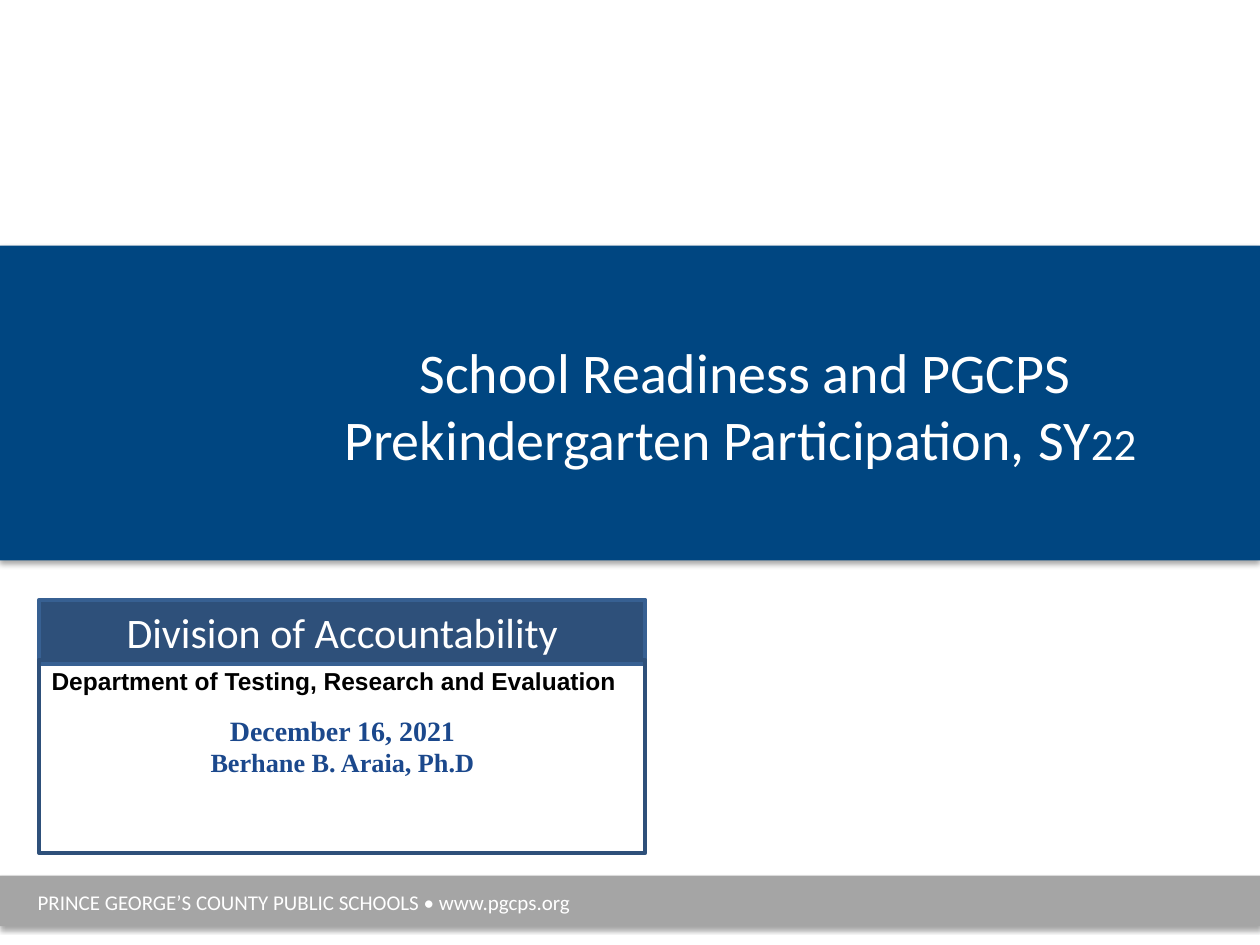
import pptx
import pptx.dml.color
import pptx.enum.shapes
import pptx.enum.text
import pptx.oxml
import pptx.oxml.ns
import pptx.util
from dataclasses import dataclass

Cm, Pt = pptx.util.Cm, pptx.util.Pt
ALIGN = pptx.enum.text.PP_ALIGN
ANCHOR = pptx.enum.text.MSO_ANCHOR


@dataclass(frozen=True)
class Theme:
    band: str = "004681"
    footer: str = "A5A5A5"
    panel: str = "2E507A"
    panel_edge: str = "376092"
    date: str = "1B488C"
    white: str = "FFFFFF"
    black: str = "000000"
    sans: str = "Calibri"
    label: str = "Arial"
    serif: str = "Times New Roman"
    title_size: int = 32
    division_size: int = 24
    date_size: int = 16
    author_size: int = 15
    label_size: int = 14
    footer_size: int = 12
    edge_width: float = 2.25


class Deck:
    def __init__(self, theme):
        self.theme = theme
        self.prs = pptx.Presentation()
        self.prs.slide_width, self.prs.slide_height = Cm(25.4), Cm(19.05)
        self.s = self.prs.slides.add_slide(self.prs.slide_layouts[6])

    def rect(self, left, top, width, height, fill=None, line=None):
        sp = self.s.shapes.add_shape(
            pptx.enum.shapes.MSO_SHAPE.RECTANGLE,
            Cm(left), Cm(top), Cm(width), Cm(height))
        sp.shadow.inherit = False
        if fill:
            sp.fill.solid()
            sp.fill.fore_color.rgb = pptx.dml.color.RGBColor.from_string(fill)
        else:
            sp.fill.background()
        if line:
            sp.line.color.rgb = pptx.dml.color.RGBColor.from_string(line)
            sp.line.width = Pt(self.theme.edge_width)
        else:
            sp.line.fill.background()
        return sp

    def band(self, top, height, fill):
        """Full-width bar with a soft shadow below it."""
        sp = self.rect(0, top, 25.4, height, fill)
        effects = sp._element.spPr.find(pptx.oxml.ns.qn("a:effectLst"))
        effects.append(pptx.oxml.parse_xml(
            f'<a:outerShdw {pptx.oxml.ns.nsdecls("a")} blurRad="40000" '
            'dist="23000" dir="5400000" rotWithShape="0">'
            f'<a:srgbClr val="{self.theme.black}"><a:alpha val="35000"/>'
            '</a:srgbClr></a:outerShdw>'))

    def textbox(self, left, top, width, height):
        return self.s.shapes.add_textbox(
            Cm(left), Cm(top), Cm(width), Cm(height))

    def add_text(self, sp, lines, font, color, bold=False,
                 align=ALIGN.LEFT, anchor=ANCHOR.TOP):
        """Fill a shape with (text, size) lines."""
        tf = sp.text_frame
        tf.word_wrap = True
        tf.vertical_anchor = anchor
        tf.text = "\n".join(text for text, _ in lines)
        for p, (_, size) in zip(tf.paragraphs, lines):
            p.alignment = align
            for r in p.runs:
                self.style(r, font, size, color, bold)
        return tf

    def style(self, r, font, size, color, bold=False):
        r.font.name, r.font.size, r.font.bold = font, Pt(size), bold
        r.font.color.rgb = pptx.dml.color.RGBColor.from_string(color)


def main():
    t = Theme()
    deck = Deck(t)

    # Title band and footer
    deck.band(4.95, 6.35, t.band)
    deck.band(17.65, 1.02, t.footer)
    deck.add_text(deck.textbox(0.51, 17.81, 17.37, 0.76),
                  [("PRINCE GEORGE’S COUNTY PUBLIC SCHOOLS • www.pgcps.org",
                    t.footer_size)], t.sans, t.white)

    # Division panel
    left, width = 0.79, 12.22
    deck.add_text(deck.rect(left, 12.09, width, 1.3, t.panel, t.panel_edge),
                  [("Division of Accountability", t.division_size)],
                  t.sans, t.white, align=ALIGN.CENTER, anchor=ANCHOR.MIDDLE)
    deck.add_text(deck.rect(left, 13.31, width, 3.89, line=t.panel),
                  [("Department of Testing, Research and Evaluation",
                    t.label_size)], t.label, t.black, bold=True)

    # Presentation title, with the school year in small capitals
    tf = deck.add_text(deck.textbox(4.65, 5.13, 20.75, 6.07),
                       [("School Readiness and PGCPS "
                         "Prekindergarten Participation, ", t.title_size)],
                       t.sans, t.white, align=ALIGN.CENTER,
                       anchor=ANCHOR.MIDDLE)
    r = tf.paragraphs[0].add_run()
    r.text = "SY22 "
    deck.style(r, t.sans, t.title_size, t.white)
    r._r.get_or_add_rPr().set("cap", "small")

    # Date and presenter
    tf = deck.add_text(deck.rect(1.7, 14.25, 10.41, 1.57, t.white),
                       [("December 16, 2021", t.date_size),
                        ("Berhane B. Araia, Ph.D", t.author_size)],
                       t.serif, t.date, bold=True, align=ALIGN.CENTER)
    tf.auto_size = pptx.enum.text.MSO_AUTO_SIZE.SHAPE_TO_FIT_TEXT

    deck.prs.save("out.pptx")


if __name__ == "__main__":
    main()
